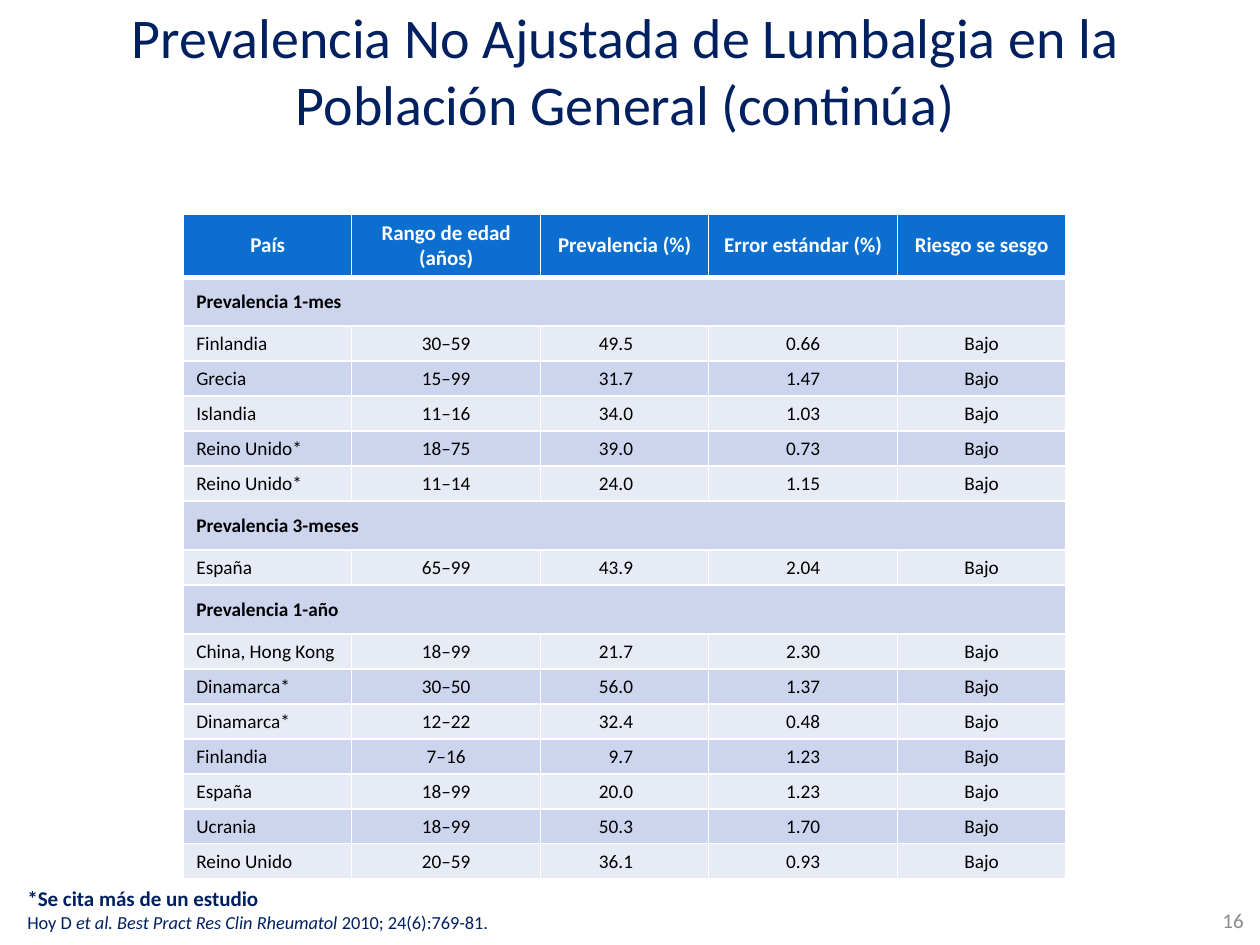
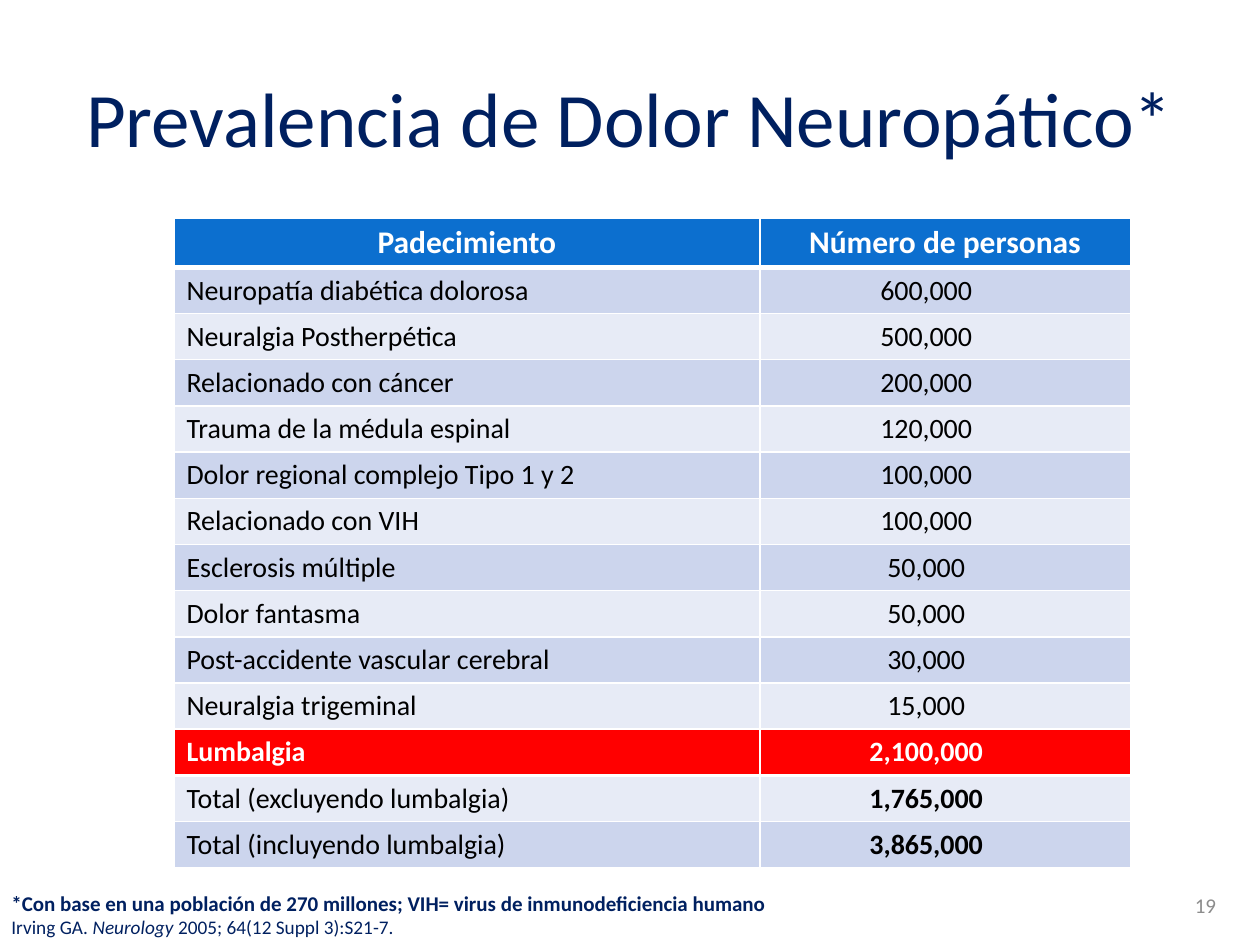
from pptx import Presentation
from pptx.dml.color import RGBColor
from pptx.enum.text import MSO_ANCHOR, PP_ALIGN
from pptx.oxml import parse_xml
from pptx.oxml.ns import nsdecls
from pptx.util import Pt

NAVY = RGBColor(0x00, 0x20, 0x60)
GRAY = RGBColor(0x8C, 0x8C, 0x8C)
BLUE = RGBColor(0x0C, 0x6F, 0xCF)
BAND_DARK = RGBColor(0xCC, 0xD5, 0xED)
BAND_LIGHT = RGBColor(0xE7, 0xEB, 0xF6)
RED = RGBColor(0xFF, 0x00, 0x00)
WHITE = RGBColor(0xFF, 0xFF, 0xFF)
BLACK = RGBColor(0x00, 0x00, 0x00)
FONT = "Calibri"
LEFT, CENTER, RIGHT = PP_ALIGN.LEFT, PP_ALIGN.CENTER, PP_ALIGN.RIGHT


def add_text(s, box, paragraphs, color, align=LEFT, anchor=MSO_ANCHOR.MIDDLE, inset=True):
    tf = s.shapes.add_textbox(*map(Pt, box)).text_frame
    tf.word_wrap = True
    tf.vertical_anchor = anchor
    if not inset:
        tf.margin_left = tf.margin_right = tf.margin_top = tf.margin_bottom = 0
    for i, (size, bold, runs) in enumerate(paragraphs):
        p = tf.paragraphs[0] if i == 0 else tf.add_paragraph()
        p.alignment = align
        p.font.name, p.font.size, p.font.bold = FONT, Pt(size), bold
        p.font.color.rgb = color
        for text, italic in runs:
            r = p.add_run()
            r.text = text
            if italic:
                r.font.italic = True


def fill_cell(cell, text, size, fill, color, bold, align, margins, top=1, bottom=1):
    tc_pr = cell._tc.get_or_add_tcPr()
    for side, width in (("L", 1), ("R", 1), ("T", top), ("B", bottom)):
        tc_pr.append(parse_xml(
            f'<a:ln{side} {nsdecls("a")} w="{Pt(width)}"><a:solidFill>'
            f'<a:srgbClr val="{WHITE}"/></a:solidFill></a:ln{side}>'))
    cell.fill.solid()
    cell.fill.fore_color.rgb = fill
    cell.vertical_anchor = MSO_ANCHOR.MIDDLE
    cell.margin_left, cell.margin_top, cell.margin_right, cell.margin_bottom = map(Pt, margins)
    p = cell.text_frame.paragraphs[0]
    p.alignment = align
    p.font.name, p.font.size, p.font.bold = FONT, Pt(size), bold
    r = p.add_run()
    r.text = text
    r.font.color.rgb = color


prevalence = [
    ("País", "Rango de edad (años)", "Prevalencia (%)", "Error estándar (%)", "Riesgo se sesgo"),
    ("Prevalencia 1-mes",),
    ("Finlandia", "30–59", "49.5", "0.66", "Bajo"),
    ("Grecia", "15–99", "31.7", "1.47", "Bajo"),
    ("Islandia", "11–16", "34.0", "1.03", "Bajo"),
    ("Reino Unido*", "18–75", "39.0", "0.73", "Bajo"),
    ("Reino Unido*", "11–14", "24.0", "1.15", "Bajo"),
    ("Prevalencia 3-meses",),
    ("España", "65–99", "43.9", "2.04", "Bajo"),
    ("Prevalencia 1-año",),
    ("China, Hong Kong", "18–99", "21.7", "2.30", "Bajo"),
    ("Dinamarca*", "30–50", "56.0", "1.37", "Bajo"),
    ("Dinamarca*", "12–22", "32.4", "0.48", "Bajo"),
    ("Finlandia", "7–16", "9.7", "1.23", "Bajo"),
    ("España", "18–99", "20.0", "1.23", "Bajo"),
    ("Ucrania", "18–99", "50.3", "1.70", "Bajo"),
    ("Reino Unido", "20–59", "36.1", "0.93", "Bajo"),
]
conditions = [
    ("Padecimiento", "Número de personas"),
    ("Neuropatía diabética dolorosa", "600,000"),
    ("Neuralgia Postherpética", "500,000"),
    ("Relacionado con cáncer", "200,000"),
    ("Trauma de la médula espinal", "120,000"),
    ("Dolor regional complejo Tipo 1 y 2", "100,000"),
    ("Relacionado con VIH", "100,000"),
    ("Esclerosis múltiple", "50,000"),
    ("Dolor fantasma", "50,000"),
    ("Post-accidente vascular cerebral", "30,000"),
    ("Neuralgia trigeminal", "15,000"),
    ("Lumbalgia", "2,100,000"),
    ("Total (excluyendo lumbalgia)", "1,765,000"),
    ("Total (incluyendo lumbalgia)", "3,865,000"),
]

prs = Presentation()
prs.slide_width, prs.slide_height = Pt(720), Pt(540)
blank = prs.slide_layouts[6]

s = prs.slides.add_slide(blank)
add_text(s, (14.4, 13, 686, 53.3),
         [(32, False, [("Prevalencia No Ajustada de Lumbalgia en la Población General (continúa)", False)])],
         NAVY, CENTER)
add_text(s, (550, 511.2, 167.8, 28.8), [(12, False, [("16", False)])], GRAY, RIGHT)

widths = (96, 108, 96, 108, 96)
tbl = s.shapes.add_table(len(prevalence), len(widths), Pt(105), Pt(122.4), Pt(504), Pt(380)).table
for col, width in zip(tbl.columns, widths):
    col.width = Pt(width)
for i, row in enumerate(prevalence):
    header, section = i == 0, len(row) == 1
    tbl.rows[i].height = Pt(36 if header else 28 if section else 20)
    if section:
        tbl.cell(i, 0).merge(tbl.cell(i, len(widths) - 1))
    for j, text in enumerate(row):
        cell = tbl.cell(i, j)
        if header:
            fill_cell(cell, text, 12, BLUE, WHITE, True, CENTER, (7.2, 3, 7.2, 3), bottom=3)
            continue
        align = (LEFT, CENTER, RIGHT, CENTER, CENTER)[j]
        fill_cell(cell, text, 11, BAND_DARK if i % 2 else BAND_LIGHT, BLACK, section, align,
                  (7.2, 1.4, 43.2 if align == RIGHT else 7.2, 0.7), top=3 if i == 1 else 1)

add_text(s, (8.6, 502.6, 360, 35.3),
         [(12, True, [("*Se cita más de un estudio", False)]),
          (10.5, False, [("Hoy D ", False), ("et al. Best Pract Res Clin Rheumatol", True),
                         (" 2010; 24(6):769-81.", False)])],
         NAVY, anchor=MSO_ANCHOR.TOP)

s = prs.slides.add_slide(blank)
add_text(s, (36, 21.6, 648, 90), [(44, False, [("Prevalencia de Dolor Neuropático*", False)])],
         NAVY, CENTER)
add_text(s, (534.2, 502.6, 167.8, 28.8), [(12, False, [("19", False)])], GRAY, RIGHT)
add_text(s, (6.5, 508.3, 682.6, 28.1),
         [(12, True, [("*Con base en una población de 270 millones; VIH= virus de inmunodeficiencia humano",
                       False)]),
          (11, False, [("Irving GA. ", False), ("Neurology", True),
                       (" 2005; 64(12 Suppl 3):S21-7.", False)])],
         NAVY, anchor=MSO_ANCHOR.BOTTOM, inset=False)

tbl = s.shapes.add_table(len(conditions), 2, Pt(99.4), Pt(124.8), Pt(546.5), Pt(371.2)).table
for col, width in zip(tbl.columns, (334.8, 211.7)):
    col.width = Pt(width)
for i, row in enumerate(conditions):
    header, highlight, total = i == 0, row[0] == "Lumbalgia", row[0].startswith("Total")
    tbl.rows[i].height = Pt(28 if header else 26.4)
    for j, text in enumerate(row):
        cell = tbl.cell(i, j)
        if header:
            fill_cell(cell, text, 18, BLUE, WHITE, True, CENTER, (7.2, 3, 7.2, 3), bottom=3)
            continue
        fill = RED if highlight else BAND_DARK if i % 2 else BAND_LIGHT
        fill_cell(cell, text, 16, fill, WHITE if highlight else BLACK,
                  highlight or (total and j == 1), CENTER if j else LEFT,
                  (7.2, 3, 28.8 if j else 7.2, 3),
                  top=3 if i == 1 else 2.25 if i == 12 else 1, bottom=2.25 if highlight else 1)

prs.save("out.pptx")
